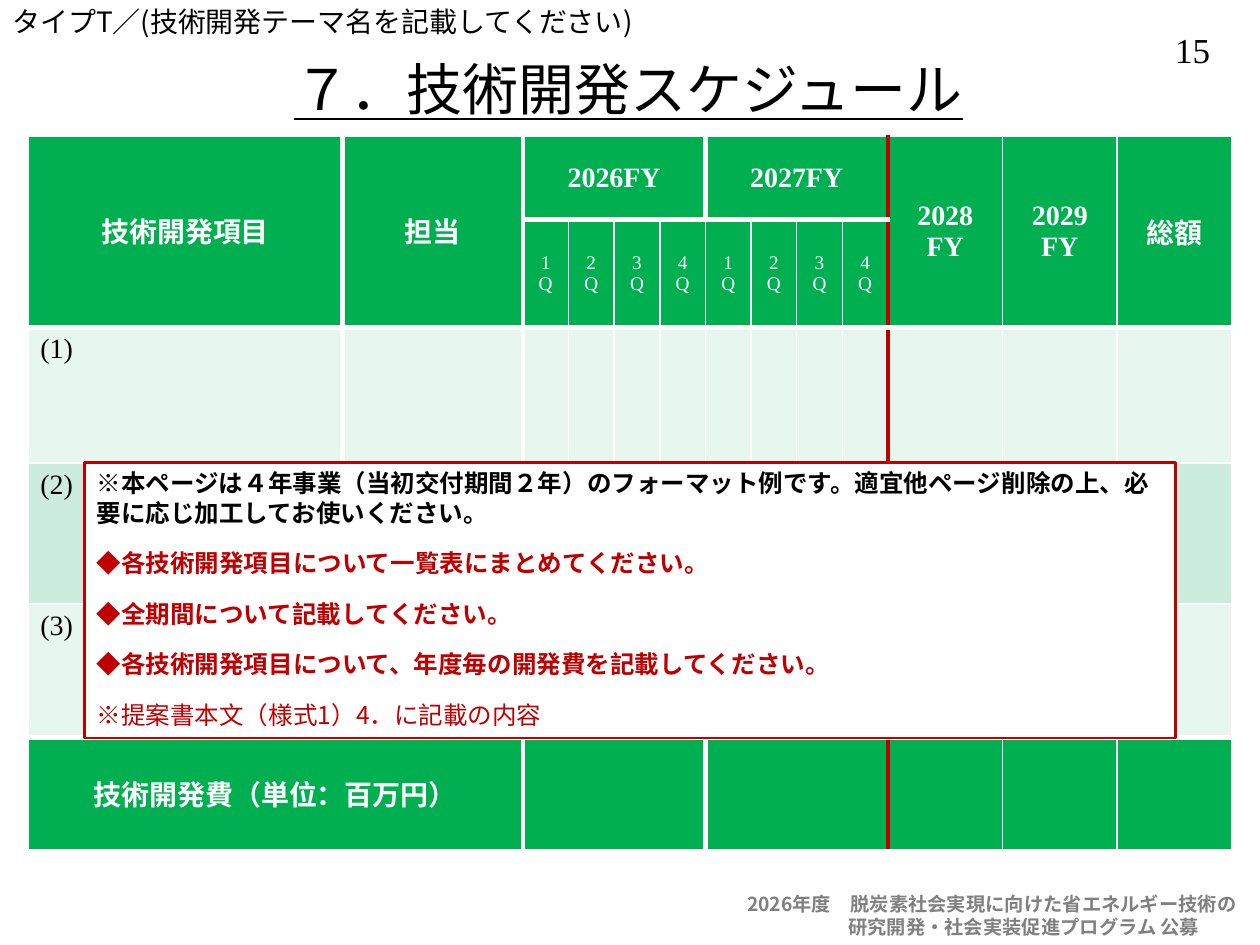
import pptx
import pptx.dml.color
import pptx.enum.shapes
import pptx.enum.text
import pptx.oxml
import pptx.oxml.ns
import pptx.util
from lxml import etree

Cm = pptx.util.Cm
Pt = pptx.util.Pt
ALIGN = pptx.enum.text.PP_ALIGN
MIDDLE = pptx.enum.text.MSO_ANCHOR.MIDDLE
qn = pptx.oxml.ns.qn

COLORS = {
    "black": "000000", "white": "FFFFFF", "gray": "808080", "red": "C00000",
    "green": "00B050", "pale": "E7F6EF", "mint": "CCECDE",
}
GOTHIC = "Noto Sans CJK JP"
SERIF = "Times New Roman"


def rgb(name):
    return pptx.dml.color.RGBColor.from_string(COLORS[name])


def format_text(text_frame, size, color, font=GOTHIC, bold=False, align=None):
    """Format every run, with the gothic font for Japanese characters."""
    for paragraph in text_frame.paragraphs:
        if align is not None:
            paragraph.alignment = align
        for run in paragraph.runs:
            run.font.size = Pt(size)
            run.font.bold = bold
            run.font.color.rgb = rgb(color)
            run.font.name = font
            east_asian = etree.SubElement(run.font._element, qn("a:ea"))
            east_asian.set("typeface", GOTHIC)


presentation = pptx.Presentation()
presentation.slide_width = Cm(25.4)
presentation.slide_height = Cm(19.05)
slide = presentation.slides.add_slide(presentation.slide_layouts[6])

# Page number, theme line, footer and title
labels = [
    ("15", (23.22, 0.46, 1.65, 1.09), 20, "black", SERIF, False, ALIGN.CENTER),
    ("タイプT／(技術開発テーマ名を記載してください)",
     (0, -0.03, 21.34, 0.94), 16, "black", GOTHIC, False, ALIGN.LEFT),
    ("2026年度　脱炭素社会実現に向けた省エネルギー技術の\n研究開発・社会実装促進プログラム 公募",
     (14.81, 17.86, 10.59, 1.19), 11, "gray", GOTHIC, True, ALIGN.LEFT),
    ("７．技術開発スケジュール",
     (1.88, 0.89, 21.59, 1.78), 32, "black", GOTHIC, False, ALIGN.CENTER),
]
boxes = []
for text, place, size, color, font, bold, align in labels:
    box = slide.shapes.add_textbox(*map(Cm, place))
    box.text_frame.word_wrap = text != "15"
    box.text_frame.text = text
    format_text(box.text_frame, size, color, font, bold, align)
    boxes.append(box)
page_number, theme, footer, title = boxes
footer.text_frame.paragraphs[1]._p.get_or_add_pPr().set("marL", str(Cm(2.04)))
title.text_frame.vertical_anchor = MIDDLE
title.text_frame.paragraphs[0].runs[0].font.underline = True

# Schedule table
column_widths = [6.35, 3.63] + [0.92] * 8 + [2.31] * 3
row_heights = [1.68, 1.68, 2.74, 2.84, 2.69, 2.26]
row_fills = ["green", "green", "pale", "mint", "pale", "green"]
row_count, column_count = len(row_heights), len(column_widths)
table = slide.shapes.add_table(
    row_count, column_count, Cm(0.56), Cm(2.74),
    Cm(sum(column_widths)), Cm(sum(row_heights))).table
table.first_row = table.horz_banding = False
for column, width in zip(table.columns, column_widths):
    column.width = Cm(width)
for row, height in zip(table.rows, row_heights):
    row.height = Cm(height)

for column in (0, 1, 10, 11, 12):
    table.cell(0, column).merge(table.cell(1, column))
for row in (0, 5):
    for column in (2, 6):
        table.cell(row, column).merge(table.cell(row, column + 3))
table.cell(5, 0).merge(table.cell(5, 1))

cell_texts = {
    (0, 0): "技術開発項目", (0, 1): "担当", (0, 2): "2026FY", (0, 6): "2027FY",
    (0, 10): "2028\nFY", (0, 11): "2029\nFY", (0, 12): "総額",
    (5, 0): "技術開発費（単位：百万円）",
}
for quarter in range(8):
    cell_texts[1, 2 + quarter] = f"{quarter % 4 + 1}Q"
for item in (1, 2, 3):
    cell_texts[1 + item, 0] = f"({item})"

for (row, column), text in cell_texts.items():
    cell = table.cell(row, column)
    cell.text_frame.text = text
    if 2 <= row <= 4:
        format_text(cell.text_frame, 16, "black", SERIF)
        continue
    is_quarter = row == 1
    format_text(cell.text_frame, 11 if is_quarter else 16, "white", SERIF,
                not is_quarter, ALIGN.CENTER)
    if row == 0 and column < 2:
        cell.margin_top = Cm(1.5)
        cell.margin_bottom = 0
    else:
        cell.vertical_anchor = MIDDLE

# Cell fills and borders; edges are numbered from the table's left and top
for row in range(row_count):
    for column in range(column_count):
        cell = table.cell(row, column)
        cell.fill.solid()
        cell.fill.fore_color.rgb = rgb(row_fills[row])
        right, bottom = column + 1, row + 1
        if cell.is_merge_origin:
            right, bottom = column + cell.span_width, row + cell.span_height
        heavy_verticals = (1, 2, 6, 10) if row in (0, 5) else (1, 2, 10)
        heavy_horizontals = (1, 2, 5) if 2 <= column <= 9 else (2, 5)
        edges = [("L", column, heavy_verticals), ("R", right, heavy_verticals),
                 ("T", row, heavy_horizontals), ("B", bottom, heavy_horizontals)]
        properties = cell._tc.get_or_add_tcPr()
        for position, (side, edge, heavy) in enumerate(edges):
            color = "red" if side in "LR" and edge == 10 else "white"
            width = Pt(3 if edge in heavy else 1)
            properties.insert(position, pptx.oxml.parse_xml(
                f'<a:ln{side} {pptx.oxml.ns.nsdecls("a")} w="{width}">'
                f'<a:solidFill><a:srgbClr val="{COLORS[color]}"/></a:solidFill>'
                f'</a:ln{side}>'))

# Instructions over the table
notice = slide.shapes.add_shape(
    pptx.enum.shapes.MSO_SHAPE.RECTANGLE, Cm(1.7), Cm(9.32), Cm(22), Cm(5.56))
notice.shadow.inherit = False
notice.fill.solid()
notice.fill.fore_color.rgb = rgb("white")
notice.line.color.rgb = rgb("red")
notice.line.width = Pt(1.5)
frame = notice.text_frame
frame.word_wrap = True
frame.vertical_anchor = pptx.enum.text.MSO_ANCHOR.TOP
frame.text = "\n".join([
    "※本ページは４年事業（当初交付期間２年）のフォーマット例です。"
    "適宜他ページ削除の上、必要に応じ加工してお使いください。",
    "◆各技術開発項目について一覧表にまとめてください。",
    "◆全期間について記載してください。",
    "◆各技術開発項目について、年度毎の開発費を記載してください。",
    "※提案書本文（様式1）4．に記載の内容",
])
format_text(frame, 14, "red", bold=True, align=ALIGN.LEFT)
frame.paragraphs[0].runs[0].font.color.rgb = rgb("black")
frame.paragraphs[-1].runs[0].font.bold = False
for paragraph in frame.paragraphs[1:]:
    paragraph.space_before = Pt(12)

presentation.save("out.pptx")
